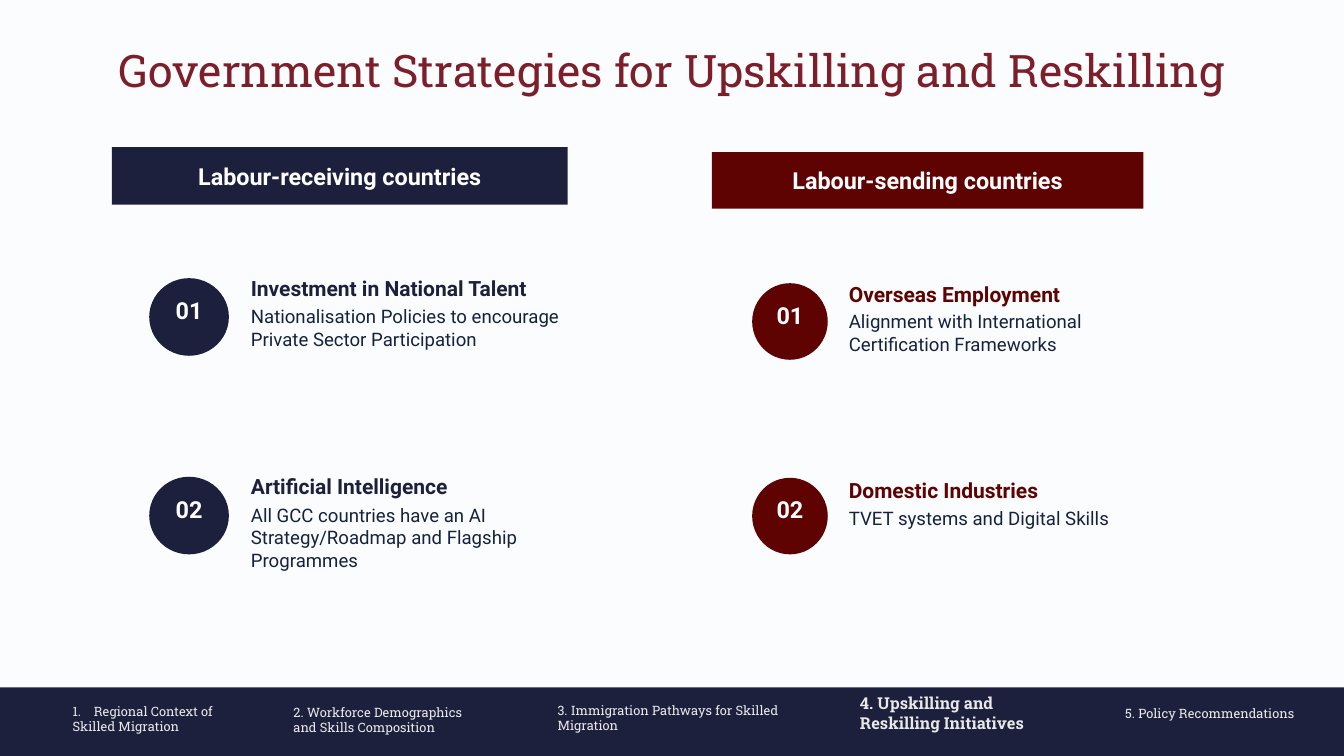
"""Build the slide on government strategies for upskilling and reskilling."""
from lxml.etree import SubElement
from pptx import Presentation
from pptx.dml.color import RGBColor
from pptx.enum.shapes import MSO_SHAPE
from pptx.enum.text import MSO_ANCHOR, PP_ALIGN
from pptx.oxml.ns import qn
from pptx.util import Inches, Pt

WIDTH, HEIGHT = 13.33, 7.5
SLAB, SANS = "Roboto Slab", "Roboto"
COLORS = {"page": "FBFCFE", "navy": "1D203C", "maroon": "5E0202", "title": "7D1E2B",
          "body": "15213F", "white": "FFFFFF", "pale": "E8E8E8"}
TITLE = "Government Strategies for Upskilling and Reskilling"
COLUMNS = [
    {"name": "Labour-receiving countries", "color": "navy",
     "head": (1.11, 1.46, 4.52, 0.57), "disc": (1.48, 0.79, 0.77),
     "text": (2.39, 3.53), "gap": 0.3, "lift": 0.08, "tops": (2.76, 4.73),
     "items": [("Investment in National Talent",
                "Nationalisation Policies to encourage Private Sector Participation"),
               ("Artificial Intelligence",
                "All GCC countries have an AI Strategy/Roadmap and Flagship Programmes")]},
    {"name": "Labour-sending countries", "color": "maroon",
     "head": (7.06, 1.51, 4.28, 0.56), "disc": (7.46, 0.75, 0.76),
     "text": (8.32, 3.35), "gap": 0.29, "lift": 0.07, "tops": (2.81, 4.74),
     "items": [("Overseas Employment",
                "Alignment with International Certification Frameworks"),
               ("Domestic Industries", "TVET systems and Digital Skills")]},
]
STEPS = [
    ("Regional Context of\nSkilled Migration", 0.72, 6.98, 1.41),
    ("2. Workforce Demographics and Skills Composition", 2.91, 6.99, 1.85),
    ("3. Immigration Pathways for Skilled Migration", 5.53, 6.97, 2.23),
    ("4. Upskilling and Reskilling Initiatives", 8.53, 6.88, 1.86),
    ("5. Policy Recommendations", 11.16, 7, 1.73),
]
ACTIVE = 3


def paint(color):
    return RGBColor.from_string(COLORS[color])


def write(frame, text, font, size, color, bold=False, align=PP_ALIGN.LEFT):
    frame.word_wrap = True
    frame.text = text
    for para in frame.paragraphs:
        para.alignment = align
        for run in para.runs:
            run.font.name, run.font.size, run.font.bold = font, Pt(size), bold
            run.font.color.rgb = paint(color)


def add_text(slide, area, text, *style, inset=True, **extra):
    frame = slide.shapes.add_textbox(*map(Inches, area)).text_frame
    if not inset:
        frame.margin_left = frame.margin_right = frame.margin_top = frame.margin_bottom = 0
    write(frame, text, *style, **extra)
    return frame


def add_block(slide, kind, area, color, text="", lift=0.0):
    shape = slide.shapes.add_shape(kind, *map(Inches, area))
    shape.shadow.inherit = False
    shape.fill.solid()
    shape.fill.fore_color.rgb = paint(color)
    shape.line.fill.background()
    if text:
        frame = shape.text_frame
        frame.margin_left = frame.margin_right = frame.margin_top = 0
        frame.margin_bottom = Inches(lift)
        frame.vertical_anchor = MSO_ANCHOR.MIDDLE
        write(frame, text, SANS, 16.7, "white", True, PP_ALIGN.CENTER)


def add_number(para):
    props = para._p.get_or_add_pPr()
    props.set("marL", str(Inches(0.21)))
    props.set("indent", str(-Inches(0.21)))
    SubElement(props, qn("a:buFont"), typeface=SLAB)
    SubElement(props, qn("a:buAutoNum"), type="arabicPeriod")


def add_column(slide, col):
    color = col["color"]
    add_block(slide, MSO_SHAPE.RECTANGLE, col["head"], color, col["name"])
    left, wide, high = col["disc"]
    text_left, text_wide = col["text"]
    for i, (top, (head, body)) in enumerate(zip(col["tops"], col["items"])):
        add_block(slide, MSO_SHAPE.OVAL, (left, top, wide, high), color, f"{i + 1:02}", 0.13)
        y = top - col["lift"] + (0.02 if color == "maroon" and i else 0)
        add_text(slide, (text_left, y, text_wide, 0.35), head, SANS, 15, color, True)
        add_text(slide, (text_left, y + col["gap"], text_wide, 0.55), body, SANS, 13.3, "body")


def main():
    deck = Presentation()
    deck.slide_width, deck.slide_height = Inches(WIDTH), Inches(HEIGHT)
    slide = deck.slides.add_slide(deck.slide_layouts[6])
    slide.background.fill.solid()
    slide.background.fill.fore_color.rgb = paint("page")
    title = add_text(slide, (0.92, 0.46, 11.5, 0.56), TITLE, SLAB, 32, "title",
                     align=PP_ALIGN.CENTER)
    title.paragraphs[0].line_spacing = Pt(32.5)
    for col in COLUMNS:
        add_column(slide, col)
    add_block(slide, MSO_SHAPE.RECTANGLE, (0, 6.82, WIDTH, HEIGHT - 6.82), "navy")
    for i, (text, left, top, wide) in enumerate(STEPS):
        size = 11.7 if i == ACTIVE else 9.2
        frame = add_text(slide, (left, top, wide, 0.32), text, SLAB, size, "pale",
                         i == ACTIVE, inset=False)
        if i == 0:
            add_number(frame.paragraphs[0])
    deck.save("out.pptx")


if __name__ == "__main__":
    main()
